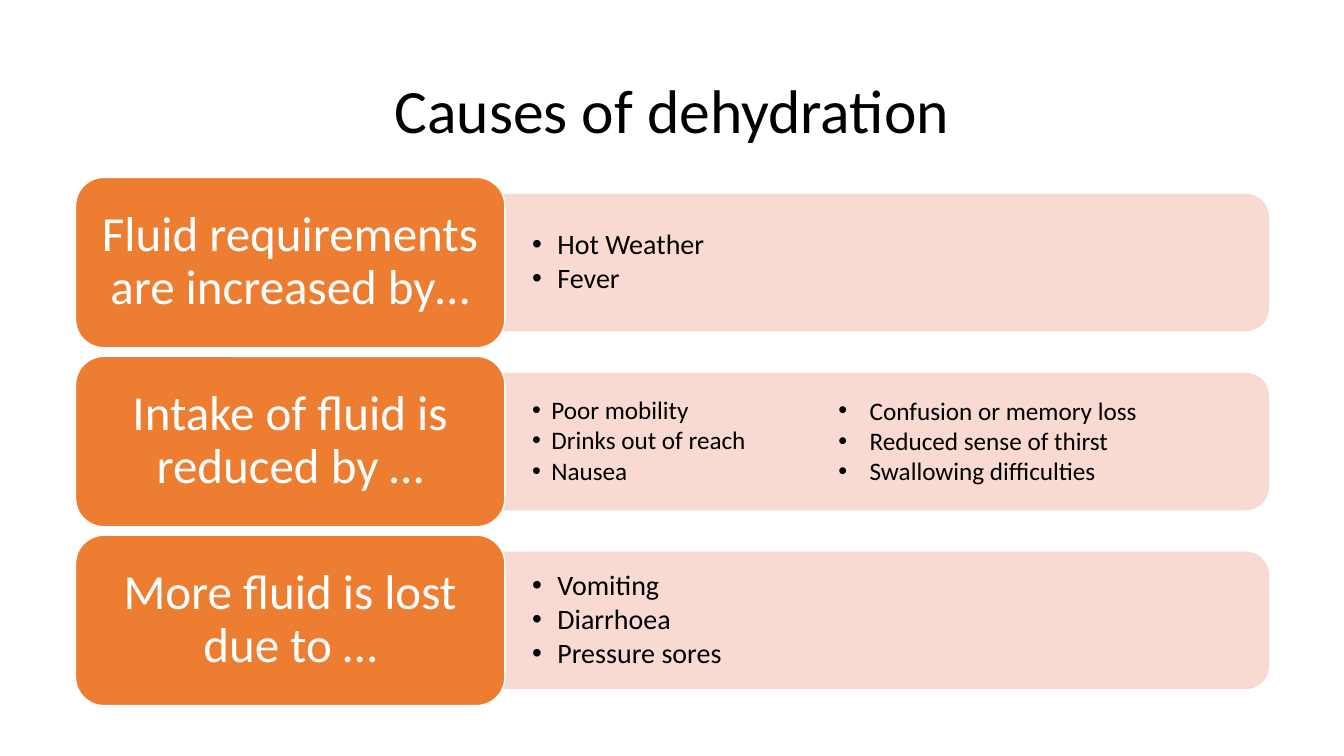
from dataclasses import dataclass

from lxml.etree import SubElement
from pptx import Presentation
from pptx.dml.color import RGBColor
from pptx.enum.shapes import MSO_SHAPE
from pptx.enum.text import MSO_ANCHOR, PP_ALIGN
from pptx.oxml.ns import qn
from pptx.shapes.autoshape import Shape
from pptx.slide import Slide
from pptx.util import Emu, Pt

EMU_PER_PX = 4572  # 200 px to the inch
COLORS = {"card": "ED7D31", "panel": "F8D7CE", "white": "FFFFFF", "black": "000000"}
FONT = "Calibri"

FIRST_TOP, ROW_PITCH = 352, 355
CARD_LEFT, CARD_WIDTH, CARD_HEIGHT = 150, 852, 338
PANEL_LEFT, PANEL_WIDTH, PANEL_HEIGHT = 1001, 1516, 270
LIST_WIDTH, LIST_HEIGHT = 1502, 244


@dataclass
class Cause:
    heading: str
    items: list[str]
    size: int = 20
    indent: int = 50


CAUSES = [
    Cause("Fluid requirements are increased by…", ["Hot Weather", "Fever"]),
    Cause("Intake of fluid is reduced by …",
          ["Poor mobility", "Drinks out of reach", "Nausea"], size=18, indent=38),
    Cause("More fluid is lost due to …", ["Vomiting", "Diarrhoea", "Pressure sores"]),
]
MORE_INTAKE_ITEMS = ["Confusion or memory loss", "Reduced sense of thirst",
                     "Swallowing difficulties"]


def px(length: int) -> Emu:
    return Emu(length * EMU_PER_PX)


def rgb(name: str) -> RGBColor:
    return RGBColor.from_string(COLORS[name])


def write_text(shape: Shape, lines: list[str], *, size: int, color: str = "black",
               align: PP_ALIGN = PP_ALIGN.LEFT, anchor: MSO_ANCHOR = MSO_ANCHOR.MIDDLE,
               insets: tuple[int, int] = (20, 10), line_spacing: float = 0.9,
               space_after: float = 0, bullet_indent: int = 0) -> None:
    """Fill a shape with paragraphs; insets are horizontal, vertical."""
    frame = shape.text_frame
    frame.word_wrap = True
    frame.vertical_anchor = anchor
    frame.margin_left = frame.margin_right = px(insets[0])
    frame.margin_top = frame.margin_bottom = px(insets[1])
    for index, line in enumerate(lines):
        paragraph = frame.add_paragraph() if index else frame.paragraphs[0]
        paragraph.text = line
        paragraph.alignment = align
        paragraph.line_spacing = line_spacing
        paragraph.space_after = Pt(space_after)
        if bullet_indent:
            properties = paragraph._p.get_or_add_pPr()
            properties.set("marL", str(px(bullet_indent)))
            properties.set("indent", str(-px(bullet_indent)))
            SubElement(properties, qn("a:buFont"), typeface="Arial")
            SubElement(properties, qn("a:buChar"), char="•")
        font = paragraph.runs[0].font
        font.name, font.size = FONT, Pt(size)
        font.color.rgb = rgb(color)


def add_text_box(slide: Slide, left: int, top: int, width: int, height: int) -> Shape:
    return slide.shapes.add_textbox(px(left), px(top), px(width), px(height))


def add_block(slide: Slide, kind: MSO_SHAPE, left: int, top: int, width: int,
              height: int, fill: str, line: str) -> Shape:
    shape = slide.shapes.add_shape(kind, px(left), px(top), px(width), px(height))
    shape.shadow.inherit = False
    shape.fill.solid()
    shape.fill.fore_color.rgb = rgb(fill)
    shape.line.color.rgb = rgb(line)
    shape.line.width = Pt(1)
    return shape


def add_panel(slide: Slide, middle: int) -> None:
    """Draw the pale bar, an upright shape turned so its round end faces right."""
    center = PANEL_LEFT + PANEL_WIDTH // 2
    panel = add_block(slide, MSO_SHAPE.ROUND_2_SAME_RECTANGLE,
                      center - PANEL_HEIGHT // 2, middle - PANEL_WIDTH // 2,
                      PANEL_HEIGHT, PANEL_WIDTH, "panel", "panel")
    panel.rotation = 90
    for color in panel._element.spPr.iter(qn("a:srgbClr")):
        SubElement(color, qn("a:alpha"), val="90000")


def add_cause(slide: Slide, cause: Cause, top: int) -> None:
    middle = top + CARD_HEIGHT // 2
    add_panel(slide, middle)
    items = add_text_box(slide, CARD_LEFT + CARD_WIDTH, middle - LIST_HEIGHT // 2,
                         LIST_WIDTH, LIST_HEIGHT)
    write_text(items, cause.items, size=cause.size, insets=(54, 28),
               space_after=round(cause.size * 0.135, 1), bullet_indent=cause.indent)
    card = add_block(slide, MSO_SHAPE.ROUNDED_RECTANGLE, CARD_LEFT, top,
                     CARD_WIDTH, CARD_HEIGHT, "card", "white")
    write_text(card, [cause.heading], size=35, color="white",
               align=PP_ALIGN.CENTER, insets=(30, 14))


def main() -> None:
    presentation = Presentation()
    presentation.slide_width, presentation.slide_height = px(2667), px(1500)
    slide = presentation.slides.add_slide(presentation.slide_layouts[6])
    title = add_text_box(slide, 184, 80, 2300, 290)
    write_text(title, ["Causes of dehydration"], size=44, align=PP_ALIGN.CENTER)
    for row, cause in enumerate(CAUSES):
        add_cause(slide, cause, FIRST_TOP + row * ROW_PITCH)
    more_items = add_text_box(slide, 1644, 774, 724, 202)
    write_text(more_items, MORE_INTAKE_ITEMS, size=18, anchor=MSO_ANCHOR.TOP,
               line_spacing=1.0, bullet_indent=62)
    presentation.save("out.pptx")


if __name__ == "__main__":
    main()
